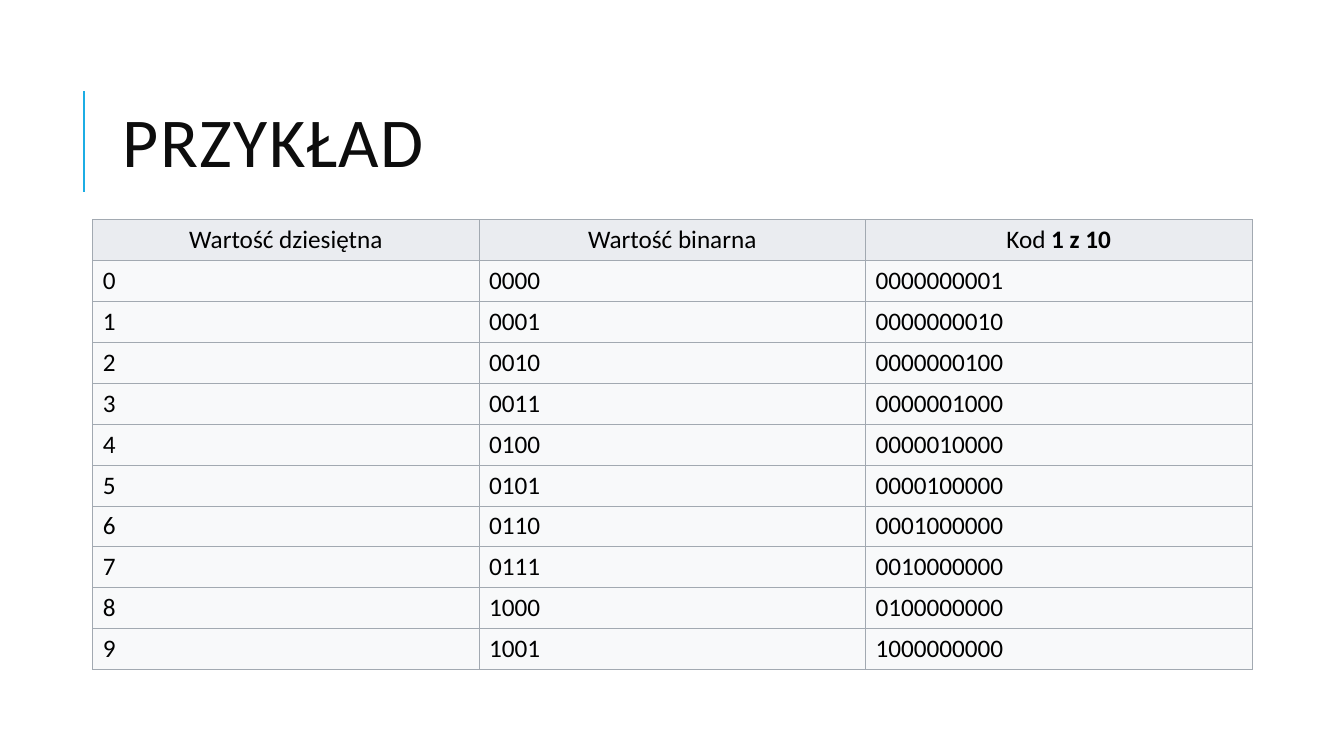
from dataclasses import dataclass

from lxml import etree
from pptx import Presentation
from pptx import util as u
from pptx.dml.color import RGBColor
from pptx.enum import shapes, text
from pptx.oxml import ns

COLUMN = ROW = u.Inches(1 / 12)
SLIDE_COLUMNS, SLIDE_ROWS = 160, 90
FONT = "Calibri"
ACCENT = RGBColor(0x1C, 0xAD, 0xE4)
TITLE_INK = RGBColor(0x0D, 0x0D, 0x0D)
INK = RGBColor(0, 0, 0)
HEADING_FILL = RGBColor(0xEA, 0xEC, 0xF0)
BODY_FILL = RGBColor(0xF8, 0xF9, 0xFA)
BORDER = RGBColor(0xA2, 0xA9, 0xB1)


@dataclass(frozen=True)
class Area:
    """A rectangle in grid columns and rows."""

    left: float
    top: float
    width: float
    height: float

    def emu(self) -> tuple[int, ...]:
        """Return left, top, width and height as EMU."""
        units = (COLUMN, ROW, COLUMN, ROW)
        sides = (self.left, self.top, self.width, self.height)
        return tuple(round(side * unit) for side, unit in zip(sides, units))


@dataclass(frozen=True)
class Entry:
    """The content and look of one table cell."""

    words: str
    strong: str = ""
    fill: RGBColor = BODY_FILL
    align: text.PP_ALIGN = text.PP_ALIGN.LEFT


TITLE = Area(13.44, 7.68, 127.56, 19.68)
RULE = Area(10, 10.8, 0, 12)
CODES = Area(11.04, 26.16, 138, 52.8)
HEADINGS = (("Wartość dziesiętna", ""), ("Wartość binarna", ""), ("Kod ", "1 z 10"))
DIGITS = 10


def apply(target: object, values: dict[str, object]) -> None:
    """Set every named attribute on the target."""
    for name, value in values.items():
        setattr(target, name, value)


def add_words(paragraph, words: str, size: float, ink: RGBColor, bold: bool = False) -> None:
    """Add one formatted run to a paragraph."""
    run = paragraph.add_run()
    run.text = words
    apply(run.font, {"name": FONT, "size": u.Pt(size), "bold": bold})
    run.font.color.rgb = ink


def draw_rule(slide, area: Area) -> None:
    """Draw the accent line beside the title, from bottom to top."""
    left, top, width, height = area.emu()
    rule = slide.shapes.add_connector(
        shapes.MSO_CONNECTOR.STRAIGHT, left, top + height, left + width, top
    )
    rule.line.color.rgb = ACCENT
    rule.line.width = u.Pt(1.5)
    etree.SubElement(rule.element.spPr, ns.qn("a:effectLst"))


def fill_title(slide, area: Area, words: str) -> None:
    """Place and format the title placeholder."""
    title = slide.shapes.title
    apply(title, dict(zip(("left", "top", "width", "height"), area.emu())))
    apply(title.text_frame, {
        "word_wrap": True,
        "auto_size": text.MSO_AUTO_SIZE.NONE,
        "vertical_anchor": text.MSO_ANCHOR.MIDDLE,
    })
    heading = title.text_frame.paragraphs[0]
    apply(heading, {"alignment": text.PP_ALIGN.LEFT, "line_spacing": 0.8})
    add_words(heading, words, 50, TITLE_INK)
    title.element.find(".//" + ns.qn("a:rPr")).set("spc", "100")


def border_cell(cell) -> None:
    """Give a cell a thin line on all four sides."""
    properties = cell._tc.get_or_add_tcPr()
    for side in ("lnL", "lnR", "lnT", "lnB"):
        edge = etree.SubElement(properties, ns.qn(f"a:{side}"), w=str(u.Pt(0.6)))
        paint = etree.SubElement(edge, ns.qn("a:solidFill"))
        etree.SubElement(paint, ns.qn("a:srgbClr"), val=str(BORDER))


def fill_cell(cell, entry: Entry) -> None:
    """Write an entry into a table cell."""
    border_cell(cell)
    cell.fill.solid()
    cell.fill.fore_color.rgb = entry.fill
    cell.vertical_anchor = text.MSO_ANCHOR.MIDDLE
    paragraph = cell.text_frame.paragraphs[0]
    paragraph.alignment = entry.align
    add_words(paragraph, entry.words, 18, INK)
    if entry.strong:
        add_words(paragraph, entry.strong, 18, INK, bold=True)


def code_entries() -> list[list[Entry]]:
    """Build the heading row and one row for each decimal digit."""
    headings = [
        Entry(words, strong, HEADING_FILL, text.PP_ALIGN.CENTER)
        for words, strong in HEADINGS
    ]
    codes = [
        [Entry(str(digit)), Entry(f"{digit:04b}"), Entry(f"{1 << digit:010b}")]
        for digit in range(DIGITS)
    ]
    return [headings, *codes]


def draw_codes(slide, area: Area, entries: list[list[Entry]]) -> None:
    """Draw the table of codes."""
    codes = slide.shapes.add_table(len(entries), len(entries[0]), *area.emu()).table
    apply(codes, {"first_row": False, "horz_banding": False})
    for row, row_entries in enumerate(entries):
        for column, entry in enumerate(row_entries):
            fill_cell(codes.cell(row, column), entry)


def main() -> None:
    """Build and save the slide."""
    deck = Presentation()
    apply(deck, {
        "slide_width": round(SLIDE_COLUMNS * COLUMN),
        "slide_height": round(SLIDE_ROWS * ROW),
    })
    slide = deck.slides.add_slide(deck.slide_layouts.get_by_name("Title Only"))
    draw_rule(slide, RULE)
    fill_title(slide, TITLE, "PRZYKŁAD")
    draw_codes(slide, CODES, code_entries())
    deck.save("out.pptx")


if __name__ == "__main__":
    main()
